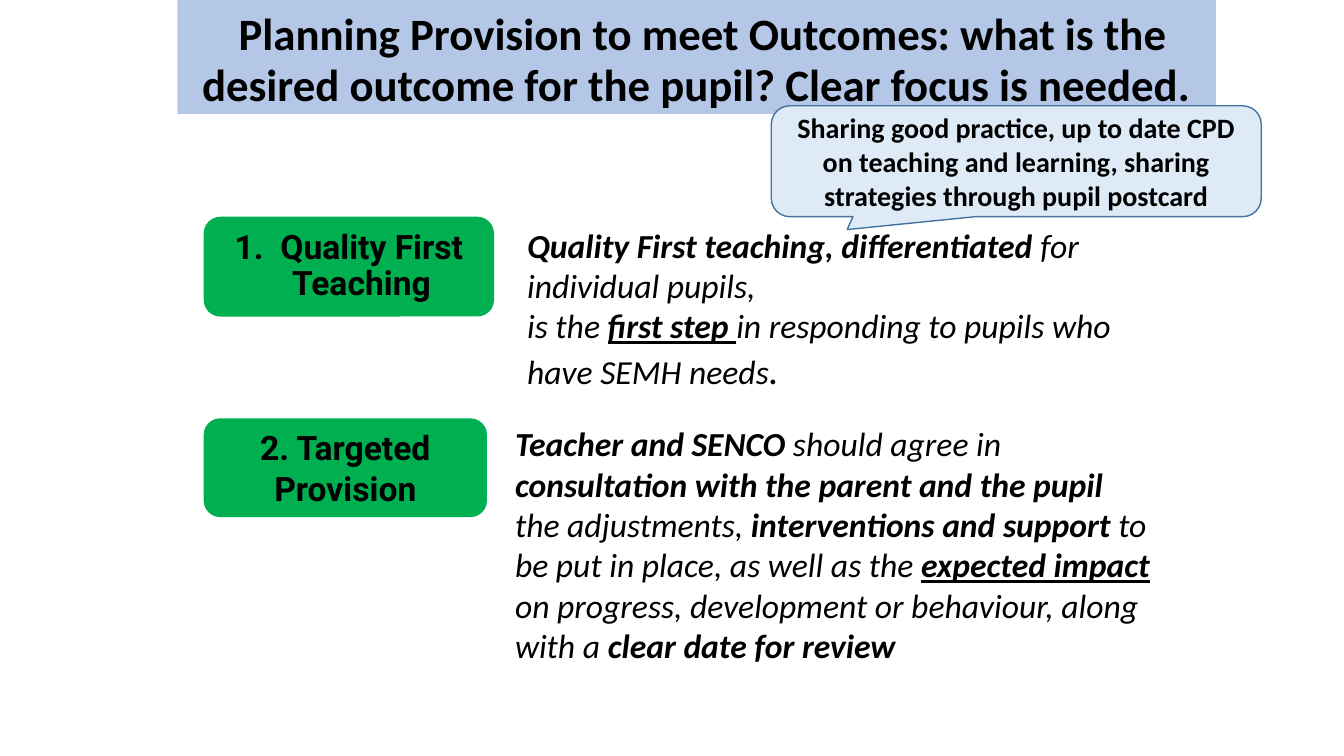
from pptx import Presentation
from pptx.dml.color import RGBColor
from pptx.enum.shapes import MSO_SHAPE
from pptx.enum.text import MSO_ANCHOR, MSO_AUTO_SIZE, PP_ALIGN
from pptx.util import Inches, Pt

HUES = {"ink": "000000", "band": "B4C7E7", "step": "00B050",
        "note": "DEEBF7", "edge": "43739E"}
BOLD = {"bold": True}
PLAIN = {"bold": False}
KEY = {"bold": True, "underline": True}


def tint(name):
    return RGBColor.from_string(HUES[name])


def apply(thing, form):
    for key, value in form.items():
        setattr(thing, key, value)


def place(shape, box):
    names = ("left", "top", "width", "height")
    apply(shape, dict(zip(names, map(Inches, box))))


def paint(shape, hue):
    shape.fill.solid()
    shape.fill.fore_color.rgb = tint(hue)


def write(frame, paras, base, form, anchor=MSO_ANCHOR.MIDDLE):
    apply(frame, {"word_wrap": True, "auto_size": MSO_AUTO_SIZE.NONE,
                  "vertical_anchor": anchor})
    for spot, runs in enumerate(paras):
        para = frame.add_paragraph() if spot else frame.paragraphs[0]
        apply(para, form)
        for text, extra in runs:
            run = para.add_run()
            run.text = text
            apply(run.font, {**base, **extra})
            run.font.color.rgb = tint("ink")


def add_box(slide, kind, box, hue, text, base):
    shape = slide.shapes.add_shape(kind, *map(Inches, box))
    shape.shadow.inherit = False
    shape.line.fill.background()
    paint(shape, hue)
    write(shape.text_frame, [[(text, {})]], base, {"alignment": PP_ALIGN.CENTER})
    return shape


def add_title(slide, box):
    title = slide.shapes.title
    place(title, box)
    paint(title, "band")
    text = ("Planning Provision to meet Outcomes: what is the desired outcome "
            "for the pupil? Clear focus is needed.")
    runs = [(" ", {"size": Pt(40)}), (text, {})]
    base = {"name": "Calibri", "size": Pt(32), "bold": True}
    write(title.text_frame, [runs], base,
          {"alignment": PP_ALIGN.CENTER, "line_spacing": 0.9})


def add_step(slide, box, label, body, paras, hang=False):
    base = {"name": "Roboto", "size": Pt(24), "bold": True}
    shape = add_box(slide, MSO_SHAPE.ROUNDED_RECTANGLE, box, "step", label, base)
    if hang:
        para = shape.text_frame.paragraphs[0]
        para.line_spacing = 0.9
        props = para._p.get_or_add_pPr()
        props.set("marL", str(Inches(0.25)))
        props.set("indent", str(Inches(-0.25)))
    left, top = box[:2]
    right, down, width, height = body
    area = slide.shapes.add_textbox(*map(Inches, (left + right, top + down, width, height)))
    base = {"name": "Calibri", "size": Pt(24), "italic": True}
    write(area.text_frame, paras, base, {}, MSO_ANCHOR.TOP)


def add_note(slide, box):
    text = ("Sharing good practice, up to date CPD on teaching and learning, "
            "sharing strategies through pupil postcard")
    base = {"name": "Calibri", "size": Pt(20), "bold": True}
    note = add_box(slide, MSO_SHAPE.ROUNDED_RECTANGULAR_CALLOUT, box, "note", text, base)
    note.line.color.rgb = tint("edge")
    note.line.width = Pt(1)
    for spot, value in enumerate((-0.345, 0.616, 0.167)):
        note.adjustments[spot] = value


FIRST = [
    [("Quality First teaching, differentiated ", BOLD),
     ("for individual pupils,", PLAIN)],
    [("is the ", PLAIN), ("first step ", KEY),
     ("in responding to pupils who have SEMH needs", PLAIN),
     (".", {"bold": False, "size": Pt(28)})],
]
SECOND = [[
    ("Teacher and SENCO ", BOLD), ("should agree in ", PLAIN),
    ("consultation with the parent and the pupil ", BOLD),
    ("the adjustments, ", PLAIN), ("interventions and support ", BOLD),
    ("to be put in place, as well as the ", PLAIN),
    ("expected impact ", KEY),
    ("on progress, development or behaviour, along with a ", PLAIN),
    ("clear date for review", BOLD),
]]


def main():
    deck = Presentation()
    apply(deck, {"slide_width": Inches(13.33), "slide_height": Inches(7.5)})
    slide = deck.slides.add_slide(deck.slide_layouts[5])
    add_title(slide, (1.76, 0, 10.3, 1.13))
    add_step(slide, (2.02, 2.15, 2.88, 0.99), "1.  Quality First Teaching",
             (3.11, 0.03, 6.4, 1.78), FIRST, hang=True)
    add_step(slide, (2.02, 4.15, 2.81, 0.98), "2. Targeted Provision",
             (2.99, 0, 6.52, 2.52), SECOND)
    add_note(slide, (7.65, 1.05, 4.86, 1.1))
    deck.save("out.pptx")


if __name__ == "__main__":
    main()
